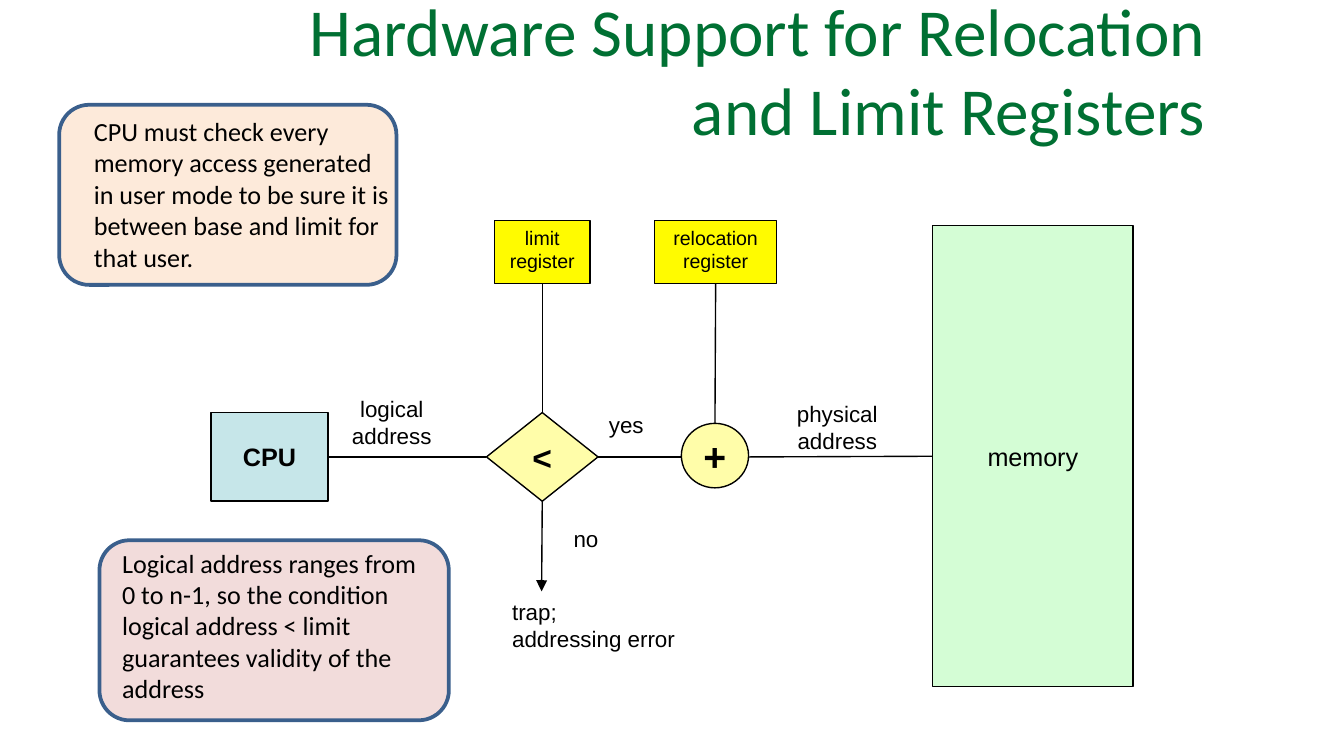
"""Build the slide on hardware support for relocation and limit registers."""
from lxml import etree
from pptx import Presentation
from pptx.dml.color import RGBColor
from pptx.enum import shapes, text
from pptx.oxml import ns
from pptx.util import Inches, Pt

BLACK = RGBColor(0x00, 0x00, 0x00)
GREEN = RGBColor(0x00, 0x70, 0x33)
NAVY = RGBColor(0x3A, 0x5F, 0x8C)
PINK = RGBColor(0xF2, 0xDC, 0xDB)
PEACH = RGBColor(0xFD, 0xEA, 0xDA)
PALE_BLUE = RGBColor(0xC6, 0xE6, 0xE9)
PALE_GREEN = RGBColor(0xD4, 0xFD, 0xD5)
CREAM = RGBColor(0xFF, 0xFD, 0xA9)
YELLOW = RGBColor(0xFF, 0xFB, 0x00)

SHAPE = shapes.MSO_SHAPE
ALIGN = text.PP_ALIGN
ANCHOR = text.MSO_ANCHOR
TOP, LEFT, BOTTOM, RIGHT = range(4)
SLIM = (0.04, 0.04, 0.04, 0.04)
INDENTED = (0.07, 0.04, 0.04, 0.04)
RAISED = (0.04, 0.04, 0.04, 0.75)
ROOMY = (0.1, 0.05, 0.1, 0.05)


def set_attributes(target, values):
    """Set each named attribute of the target."""
    for name, value in values.items():
        setattr(target, name, value)


def write(shape, lines, size, font="Arial", color=BLACK, bold=False, spacing=None,
          align=ALIGN.CENTER, anchor=ANCHOR.TOP, insets=SLIM, wrap=True):
    """Write one paragraph for each line into the shape."""
    frame = shape.text_frame
    sides = ("margin_left", "margin_top", "margin_right", "margin_bottom")
    set_attributes(frame, dict(zip(sides, map(Inches, insets))))
    set_attributes(frame, {"word_wrap": wrap, "vertical_anchor": anchor})
    for number, line in enumerate(lines):
        para = frame.paragraphs[0] if number == 0 else frame.add_paragraph()
        set_attributes(para, {"alignment": align, "line_spacing": spacing})
        span = para.add_run()
        span.text = line
        set_attributes(span.font, {"name": font, "size": Pt(size), "bold": bold})
        span.font.color.rgb = color


def add_label(slide, place, lines, size=12, **style):
    """Add a text box."""
    box = slide.shapes.add_textbox(*map(Inches, place))
    write(box, lines, size, **style)


def add_block(slide, kind, place, fill, line=BLACK, width=0.75):
    """Add a filled and outlined shape."""
    block = slide.shapes.add_shape(kind, *map(Inches, place))
    block.shadow.inherit = False
    block.fill.solid()
    block.fill.fore_color.rgb = fill
    block.line.color.rgb = line
    block.line.width = Pt(width)
    return block


def add_note(slide, place, fill, text_place, words):
    """Add a rounded panel with a remark over it."""
    add_block(slide, SHAPE.ROUNDED_RECTANGLE, place, fill, NAVY, 2)
    add_label(slide, text_place, [words], 14, font="Calibri",
              align=ALIGN.LEFT, insets=ROOMY)


def add_node(slide, kind, place, fill, lines, size, bold=False, anchor=ANCHOR.MIDDLE):
    """Add a diagram node with its caption inside."""
    node = add_block(slide, kind, place, fill)
    write(node, lines, size, bold=bold, anchor=anchor, wrap=False)
    return node


def add_link(slide, start, end, source=None, target=None, arrow=False):
    """Add a straight line, joined to the given (shape, side) pairs."""
    link = slide.shapes.add_connector(
        shapes.MSO_CONNECTOR.STRAIGHT, *map(Inches, start + end))
    if source:
        link.begin_connect(*source)
    if target:
        link.end_connect(*target)
    link.line.color.rgb = BLACK
    link.line.width = Pt(0.75)
    if arrow:
        etree.SubElement(link.line._get_or_add_ln(), ns.qn("a:tailEnd"), type="triangle")
    etree.SubElement(link._element.spPr, ns.qn("a:effectLst"))


def add_diagram(slide):
    """Draw the address check from the CPU to memory."""
    cpu = add_node(slide, SHAPE.RECTANGLE, (1.57, 3.07, 0.87, 0.66),
                   PALE_BLUE, ["CPU"], 13.5, bold=True)
    memory = add_node(slide, SHAPE.RECTANGLE, (6.94, 1.68, 1.49, 3.43),
                      PALE_GREEN, ["memory"], 13.5)
    check = add_node(slide, SHAPE.DIAMOND, (3.62, 3.07, 0.83, 0.66),
                     CREAM, ["<"], 18, bold=True)
    adder = add_node(slide, SHAPE.OVAL, (5.07, 3.15, 0.5, 0.48),
                     CREAM, ["+"], 21, bold=True)
    limit = add_node(slide, SHAPE.RECTANGLE, (3.68, 1.64, 0.71, 0.47),
                     YELLOW, ["limit", "register"], 10.5, anchor=ANCHOR.TOP)
    relocation = add_node(slide, SHAPE.RECTANGLE, (4.87, 1.64, 0.91, 0.47),
                          YELLOW, ["relocation", "register"], 10.5, anchor=ANCHOR.TOP)

    add_link(slide, (2.44, 3.4), (3.62, 3.4), (cpu, RIGHT), (check, LEFT))
    add_link(slide, (4.45, 3.4), (5.07, 3.4), (check, RIGHT))
    add_link(slide, (5.57, 3.4), (6.94, 3.4), target=(memory, LEFT))
    add_link(slide, (4.03, 2.11), (4.03, 3.07), (limit, BOTTOM), (check, TOP))
    add_link(slide, (5.32, 2.11), (5.32, 3.15), (relocation, BOTTOM), (adder, TOP))
    add_link(slide, (4.03, 3.73), (4.03, 4.4), (check, BOTTOM), arrow=True)

    add_label(slide, (2.49, 2.9, 0.85, 0.45), ["logical", "address"])
    add_label(slide, (5.84, 2.94, 0.78, 0.45), ["physical", "address"])
    add_label(slide, (4.42, 3.02, 0.48, 0.27), ["yes"])
    add_label(slide, (4.14, 3.87, 0.44, 0.27), ["no"])
    add_label(slide, (3.74, 4.41, 1.49, 0.45), ["trap;", "addressing error"],
              align=ALIGN.LEFT, insets=INDENTED)


def main():
    """Build and save the deck."""
    deck = Presentation()
    width = Inches(10)
    set_attributes(deck, {"slide_width": width, "slide_height": width * 9 // 16})
    slide = deck.slides.add_slide(deck.slide_layouts[6])
    add_label(slide, (1.65, 0.39, 7.36, 1),
              ["Hardware Support for Relocation and Limit Registers"], 36,
              font="Calibri", color=GREEN, spacing=0.98, align=ALIGN.RIGHT,
              anchor=ANCHOR.MIDDLE, insets=RAISED)
    add_diagram(slide)
    add_note(slide, (0.44, 0.78, 2.51, 1.34), PEACH, (0.6, 0.81, 2.4, 1.28),
             "CPU must check every memory access generated in user mode "
             "to be sure it is between base and limit for that user.")
    add_note(slide, (0.74, 4.02, 2.6, 1.34), PINK, (0.81, 4.02, 2.51, 1.28),
             "Logical address ranges from 0 to n-1, so the condition "
             "logical address < limit guarantees validity of the address")
    deck.save("out.pptx")


if __name__ == "__main__":
    main()
